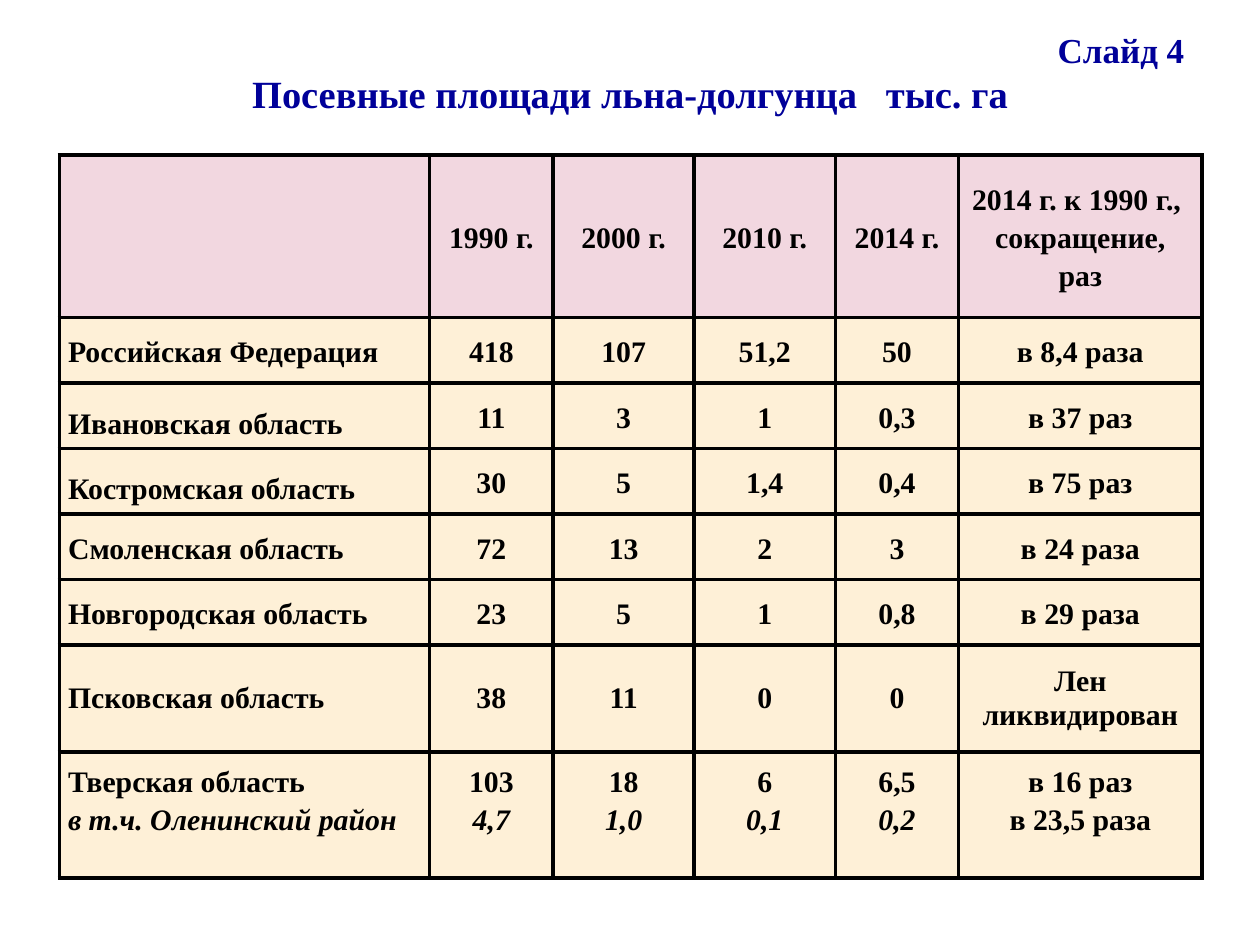
from dataclasses import dataclass

import pptx
import pptx.dml.color
import pptx.enum.text
import pptx.oxml
import pptx.oxml.ns
import pptx.util

Inches = pptx.util.Inches
Align = pptx.enum.text.PP_ALIGN
Anchor = pptx.enum.text.MSO_ANCHOR

FONT = "Times New Roman"
BLACK = "000000"
NAVY = "000099"
PINK = "F2D7E0"
CREAM = "FEF0D7"
COLUMN_WIDTHS = [2.94, 0.98, 1.12, 1.12, 0.98, 1.93]


@dataclass
class TableRow:
    texts: list[str]
    height: float = 0.52
    fill: str = CREAM
    spacing: float = 1.15
    label_spacing: float = 1.15
    bottom_margin: float = 0


ROWS = [
    TableRow(["", "1990 г.", "2000 г.", "2010 г.", "2014 г.",
              "2014 г. к 1990 г., \nсокращение,\nраз"], height=1.29, fill=PINK),
    TableRow(["Российская Федерация", "418", "107", "51,2", "50", "в 8,4 раза"]),
    TableRow(["Ивановская область", "11", "3", "1", "0,3", "в 37 раз"],
             label_spacing=1.5),
    TableRow(["Костромская область", "30", "5", "1,4", "0,4", "в 75 раз"],
             label_spacing=1.5),
    TableRow(["Смоленская область", "72", "13", "2", "3", "в 24 раза"]),
    TableRow(["Новгородская область", "23", "5", "1", "0,8", "в 29 раза"]),
    TableRow(["Псковская область", "38", "11", "0", "0", "Лен ликвидирован"],
             height=0.85, spacing=1, label_spacing=1),
    TableRow(["Тверская область\nв т.ч. Оленинский район", "103\n4,7", "18\n1,0",
              "6\n0,1", "6,5\n0,2", "в 16 раз\nв 23,5 раза"],
             height=1, bottom_margin=0.25),
]


def rgb(color: str) -> pptx.dml.color.RGBColor:
    return pptx.dml.color.RGBColor.from_string(color)


def format_font(font, size: float, color: str, italic: bool = False) -> None:
    font.name = FONT
    font.size = pptx.util.Pt(size)
    font.bold = True
    font.italic = italic
    font.color.rgb = rgb(color)


def add_borders(cell) -> None:
    properties = cell._tc.get_or_add_tcPr()
    namespace = pptx.oxml.ns.nsdecls("a")
    for position, side in enumerate(("lnL", "lnR", "lnT", "lnB")):
        border = pptx.oxml.parse_xml(
            f'<a:{side} {namespace} w="28575"><a:solidFill>'
            f'<a:srgbClr val="{BLACK}"/></a:solidFill></a:{side}>')
        properties.insert(position, border)


def fill_cell(cell, row: TableRow, column: int) -> None:
    cell.fill.solid()
    cell.fill.fore_color.rgb = rgb(row.fill)
    add_borders(cell)
    cell.vertical_anchor = Anchor.MIDDLE
    cell.margin_left = cell.margin_right = Inches(0.07)
    cell.margin_top = 0
    cell.margin_bottom = Inches(row.bottom_margin)
    cell.text_frame.text = row.texts[column]
    is_label = column == 0
    is_reduction = column == len(COLUMN_WIDTHS) - 1
    for line, para in enumerate(cell.text_frame.paragraphs):
        para.alignment = Align.LEFT if is_label else Align.CENTER
        para.line_spacing = row.label_spacing if is_label else row.spacing
        for span in para.runs:
            format_font(span.font, 17, BLACK, italic=line > 0 and not is_reduction)


def add_area_table(page) -> None:
    frame = page.shapes.add_table(
        len(ROWS), len(COLUMN_WIDTHS), Inches(0.47), Inches(1.23),
        Inches(sum(COLUMN_WIDTHS)), Inches(sum(row.height for row in ROWS)))
    table = frame.table
    for column, width in zip(table.columns, COLUMN_WIDTHS):
        column.width = Inches(width)
    for index, row in enumerate(ROWS):
        table.rows[index].height = Inches(row.height)
        for column in range(len(COLUMN_WIDTHS)):
            fill_cell(table.cell(index, column), row, column)


def set_title(page) -> None:
    title = page.shapes.title
    title.left, title.top = Inches(0.5), 0
    title.width, title.height = Inches(9), Inches(1.15)
    frame = title.text_frame
    frame.auto_size = pptx.enum.text.MSO_AUTO_SIZE.NONE
    frame.vertical_anchor = Anchor.MIDDLE
    frame.text = "Слайд 4\nПосевные площади льна-долгунца"
    number, heading = frame.paragraphs
    number.alignment = Align.RIGHT
    heading.alignment = Align.CENTER
    gap = heading.add_run()
    gap.text = " "
    heading.add_run().text = "тыс. га"
    for para, size in ((number, 20), (heading, 22)):
        para.space_before = 0
        for span in para.runs:
            format_font(span.font, size, NAVY)
    gap._r.get_or_add_rPr().set("spc", "1100")


def main() -> None:
    deck = pptx.Presentation()
    deck.slide_width, deck.slide_height = Inches(10), Inches(7.5)
    page = deck.slides.add_slide(deck.slide_layouts[5])
    set_title(page)
    add_area_table(page)
    deck.save("out.pptx")


if __name__ == "__main__":
    main()
